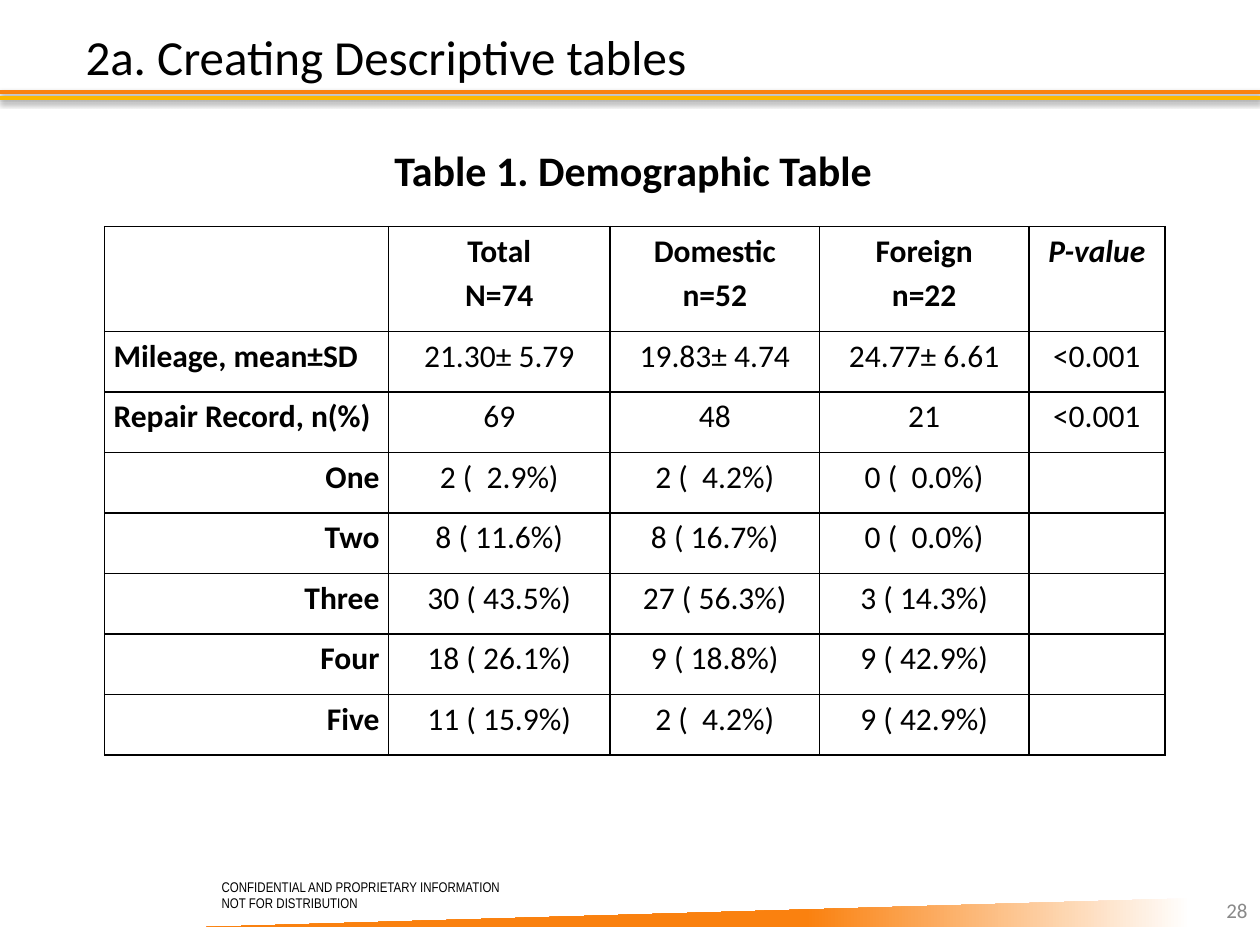
"""Build the descriptive statistics slide with its demographic table."""
import pptx
import pptx.dml.color
import pptx.enum.shapes
import pptx.enum.text
import pptx.oxml
import pptx.oxml.ns
import pptx.util
from pptx.util import Cm

BLACK = pptx.dml.color.RGBColor(0x00, 0x00, 0x00)
WHITE = pptx.dml.color.RGBColor(0xFF, 0xFF, 0xFF)
GREY = pptx.dml.color.RGBColor(0x89, 0x89, 0x89)
ORANGE = pptx.dml.color.RGBColor(0xFA, 0x81, 0x0F)
GOLD = pptx.dml.color.RGBColor(0xFC, 0xB8, 0x00)

ALIGN = pptx.enum.text.PP_ALIGN
ANCHOR = pptx.enum.text.MSO_ANCHOR
NAMESPACE = pptx.oxml.ns.nsdecls("a")

COLUMN_WIDTHS = [5.72, 4.47, 4.22, 4.22, 2.74]
HEADER_HEIGHT, ROW_HEIGHT = 2.11, 1.22
ROWS = [
    ["", "Total\nN=74", "Domestic\nn=52", "Foreign\nn=22", "P-value"],
    ["Mileage, mean±SD", "21.30± 5.79", "19.83± 4.74", "24.77± 6.61", "<0.001"],
    ["Repair Record, n(%)", "69", "48", "21", "<0.001"],
    ["One", "2 (  2.9%)", "2 (  4.2%)", "0 (  0.0%)", ""],
    ["Two", "8 ( 11.6%)", "8 ( 16.7%)", "0 (  0.0%)", ""],
    ["Three", "30 ( 43.5%)", "27 ( 56.3%)", "3 ( 14.3%)", ""],
    ["Four", "18 ( 26.1%)", "9 ( 18.8%)", "9 ( 42.9%)", ""],
    ["Five", "11 ( 15.9%)", "2 (  4.2%)", "9 ( 42.9%)", ""],
]


class SlideBuilder:
    """Hold the style and the current slide."""

    def __init__(self, slide, font="Calibri", color=BLACK):
        self.slide = slide
        self.font = font
        self.color = color

    def add_run(self, paragraph, text, size, bold=False, italic=False, font=None, color=None):
        run = paragraph.add_run()
        run.text = text
        run.font.name = font or self.font
        run.font.size = pptx.util.Pt(size)
        run.font.bold = bold
        run.font.italic = italic
        run.font.color.rgb = self.color if color is None else color

    def add_title(self, text, left, top, width, height):
        title = self.slide.shapes.title
        title.left, title.top, title.width, title.height = map(Cm, (left, top, width, height))
        frame = title.text_frame
        frame.word_wrap = False
        frame.auto_size = pptx.enum.text.MSO_AUTO_SIZE.SHAPE_TO_FIT_TEXT
        frame.vertical_anchor = ANCHOR.TOP
        frame.paragraphs[0].alignment = ALIGN.LEFT
        self.add_run(frame.paragraphs[0], text, 28)

    def add_text(self, lines, left, top, width, height, size, wrap=True,
                 align=ALIGN.LEFT, anchor=ANCHOR.TOP, **style):
        box = self.slide.shapes.add_textbox(Cm(left), Cm(top), Cm(width), Cm(height))
        frame = box.text_frame
        frame.word_wrap = wrap
        frame.vertical_anchor = anchor
        for index, line in enumerate(lines):
            paragraph = frame.add_paragraph() if index else frame.paragraphs[0]
            paragraph.alignment = align
            self.add_run(paragraph, line, size, **style)

    def add_rule(self, top, color):
        rule = self.slide.shapes.add_connector(
            pptx.enum.shapes.MSO_CONNECTOR.STRAIGHT, Cm(0), Cm(top), Cm(25.4), Cm(top))
        rule.line.color.rgb = color
        rule.line.width = pptx.util.Pt(2)
        rule._element.spPr.append(pptx.oxml.parse_xml(
            f'<a:effectLst {NAMESPACE}><a:outerShdw blurRad="40000" dist="20000" dir="5400000" '
            'rotWithShape="0"><a:srgbClr val="000000"><a:alpha val="38000"/></a:srgbClr>'
            '</a:outerShdw></a:effectLst>'))

    def add_wedge(self, left, top, width, height):
        wedge = self.slide.shapes.add_shape(
            pptx.enum.shapes.MSO_SHAPE.RIGHT_TRIANGLE, Cm(left), Cm(top), Cm(width), Cm(height))
        wedge.shadow.inherit = False
        wedge.line.fill.background()
        wedge.fill.gradient()
        wedge.fill.gradient_angle = 0
        for stop, position, color in zip(wedge.fill.gradient_stops, (0, 0.39), (WHITE, ORANGE)):
            stop.position = position
            stop.color.rgb = color
        wedge._element.spPr.xfrm.set("flipH", "1")

    def add_borders(self, cell):
        properties = cell._tc.get_or_add_tcPr()
        for side in "LRTB":
            properties.append(pptx.oxml.parse_xml(
                f'<a:ln{side} {NAMESPACE} w="12700"><a:solidFill><a:srgbClr val="{BLACK}"/>'
                f'</a:solidFill></a:ln{side}>'))

    def fill_cell(self, cell, text, align, bold, italic):
        cell.margin_left = cell.margin_right = Cm(0.18)
        cell.margin_top = cell.margin_bottom = Cm(0)
        self.add_borders(cell)
        cell.fill.background()
        paragraph = cell.text_frame.paragraphs[0]
        paragraph.alignment = align
        paragraph.line_spacing = 1.15
        for index, line in enumerate(text.split("\n") if text else []):
            if index:
                paragraph.add_line_break()
            self.add_run(paragraph, line, 18, bold, italic)

    def add_table(self, rows, left, top):
        heights = [HEADER_HEIGHT] + [ROW_HEIGHT] * (len(rows) - 1)
        table = self.slide.shapes.add_table(
            len(rows), len(COLUMN_WIDTHS), Cm(left), Cm(top),
            Cm(sum(COLUMN_WIDTHS)), Cm(sum(heights))).table
        table.first_row = table.horz_banding = False
        for column, width in zip(table.columns, COLUMN_WIDTHS):
            column.width = Cm(width)
        for row_index, (values, height) in enumerate(zip(rows, heights)):
            table.rows[row_index].height = Cm(height)
            for column_index, text in enumerate(values):
                align = ALIGN.CENTER
                if column_index == 0:
                    align = ALIGN.RIGHT if row_index > 2 else ALIGN.LEFT
                self.fill_cell(table.cell(row_index, column_index), text, align,
                               bold=row_index == 0 or column_index == 0,
                               italic=text == "P-value")


def main():
    presentation = pptx.Presentation()
    presentation.slide_width, presentation.slide_height = Cm(25.4), Cm(19.05)
    slide = presentation.slides.add_slide(presentation.slide_layouts[5])
    builder = SlideBuilder(slide)
    builder.add_wedge(4.11, 18.11, 19.89, 0.58)
    builder.add_rule(1.85, ORANGE)
    builder.add_rule(1.98, GOLD)
    builder.add_text(["CONFIDENTIAL AND PROPRIETARY INFORMATION", "NOT FOR DISTRIBUTION"],
                     4.22, 17.58, 7.42, 0.94, 8, font="Arial Narrow")
    builder.add_text(["28"], 19.48, 17.83, 5.92, 1.02, 12,
                     align=ALIGN.RIGHT, anchor=ANCHOR.MIDDLE, color=GREY)
    builder.add_table(ROWS, 2.11, 4.57)
    builder.add_title("2a. Creating Descriptive tables", 1.47, 0.41, 12.75, 1.45)
    builder.add_text(["Table 1. Demographic Table"], 7.7, 2.79, 10.24, 1.27, 24,
                     wrap=False, bold=True)
    presentation.save("out.pptx")


if __name__ == "__main__":
    main()
